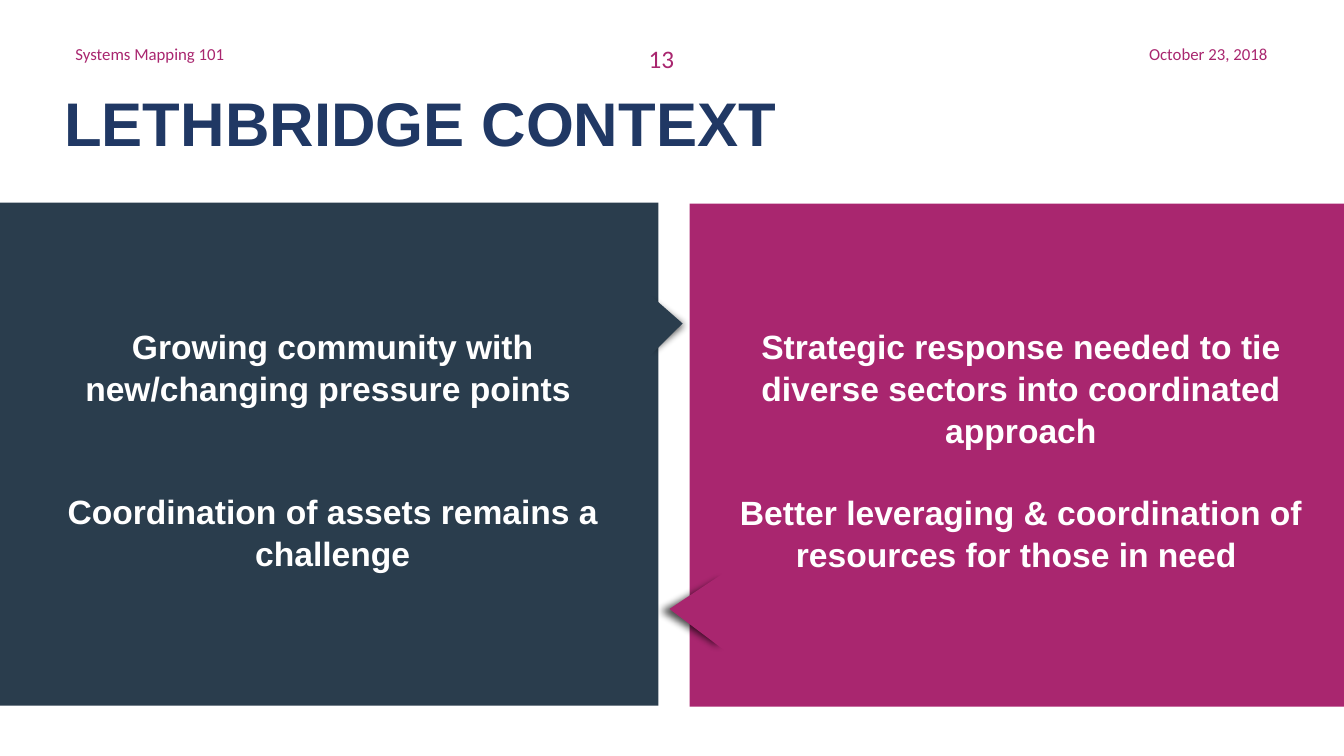
from lxml.etree import SubElement
from pptx import Presentation
from pptx.dml.color import RGBColor
from pptx.enum.shapes import MSO_SHAPE as Shape
from pptx.enum.text import MSO_ANCHOR as Anchor, PP_ALIGN as Align
from pptx.oxml.ns import qn
from pptx.util import Inches, Pt

MAGENTA = RGBColor(0xA9, 0x26, 0x6F)
SLATE = RGBColor(0x2A, 0x3D, 0x4D)
NAVY = RGBColor(0x20, 0x38, 0x64)
WHITE = RGBColor(0xFF, 0xFF, 0xFF)
BLACK = RGBColor(0, 0, 0)


class SlideBuilder:
    """Holds the slide and draws each kind of element on it."""

    heading_font = "Arial"
    small_font = "Calibri"
    soft_radius = Inches(0.08)

    def __init__(self, slide):
        self.slide = slide

    def filled(self, kind, box, color, rotation=0):
        shape = self.slide.shapes.add_shape(kind, *map(Inches, box))
        shape.shadow.inherit = False
        shape.fill.solid()
        shape.fill.fore_color.rgb = color
        shape.line.fill.background()
        shape.rotation = rotation
        return shape

    def soft_shadow(self, box, rotation):
        """Black triangle, 70% opaque, with blurred edges."""
        shadow = self.filled(Shape.ISOSCELES_TRIANGLE, box, BLACK, rotation)
        properties = shadow.fill._xPr
        SubElement(properties.find(".//" + qn("a:srgbClr")), qn("a:alpha"), val="70000")
        SubElement(properties.find(qn("a:effectLst")), qn("a:softEdge"),
                   rad=str(int(self.soft_radius)))

    def text(self, box, lines, size, color, font, bold=False, align=Align.LEFT,
             anchor=Anchor.TOP, gap=0, spacing=1.0):
        frame = self.slide.shapes.add_textbox(*map(Inches, box)).text_frame
        frame.word_wrap = True
        frame.vertical_anchor = anchor
        for index, line in enumerate(lines):
            paragraph = frame.paragraphs[0] if index == 0 else frame.add_paragraph()
            paragraph.alignment = align
            paragraph.line_spacing = spacing
            if index:
                paragraph.space_before = Pt(gap)
            run = paragraph.add_run()
            run.text = line
            run.font.name = font
            run.font.size = Pt(size)
            run.font.bold = bold
            run.font.color.rgb = color

    def header(self, left, width, label, size, align):
        self.text((left, 0.38, width, 0.4), [label], size, MAGENTA,
                  self.small_font, align=align)

    def panel(self, box, color, shadow_box, pointer_box, rotation,
              text_box, statements, gap):
        """Coloured block with a pointer to its neighbour and its statements."""
        self.filled(Shape.RECTANGLE, box, color)
        self.soft_shadow(shadow_box, rotation)
        self.filled(Shape.ISOSCELES_TRIANGLE, pointer_box, color, rotation)
        self.text(text_box, statements, 24, WHITE, self.heading_font, bold=True,
                  align=Align.CENTER, gap=gap, spacing=1.04)


def main():
    deck = Presentation()
    deck.slide_width, deck.slide_height = Inches(13.33), Inches(7.5)
    builder = SlideBuilder(deck.slides.add_slide(deck.slide_layouts[6]))

    # Header line
    builder.header(0.65, 3, "Systems Mapping 101", 12, Align.LEFT)
    builder.header(9.47, 3.2, "October 23, 2018", 12, Align.RIGHT)
    builder.header(5.06, 3, "13", 18, Align.CENTER)

    # Title
    builder.text((0.54, 0.58, 12.78, 1.25), ["LETHBRIDGE CONTEXT"], 44, NAVY,
                 builder.heading_font, bold=True, anchor=Anchor.MIDDLE)

    # Response panel, pointing left
    builder.panel(
        (6.84, 2.02, 6.49, 4.99), MAGENTA,
        (6.28, 5.63, 1, 0.87), (6.52, 5.76, 0.82, 0.58), 271.7,
        (6.93, 3.17, 6.39, 2.52),
        ["Strategic response needed to tie diverse sectors into coordinated approach",
         "Better leveraging & coordination of resources for those in need "],
        gap=28.8)

    # Challenge panel, pointing right
    builder.panel(
        (0, 2.01, 6.53, 4.99), SLATE,
        (6.23, 2.94, 0.89, 0.58), (6.21, 3.02, 0.73, 0.39), 88.3,
        (0.23, 3.17, 6.14, 2.52),
        ["Growing community with new/changing pressure points ",
         "Coordination of assets remains a challenge"],
        gap=57.6)

    deck.save("out.pptx")


if __name__ == "__main__":
    main()
